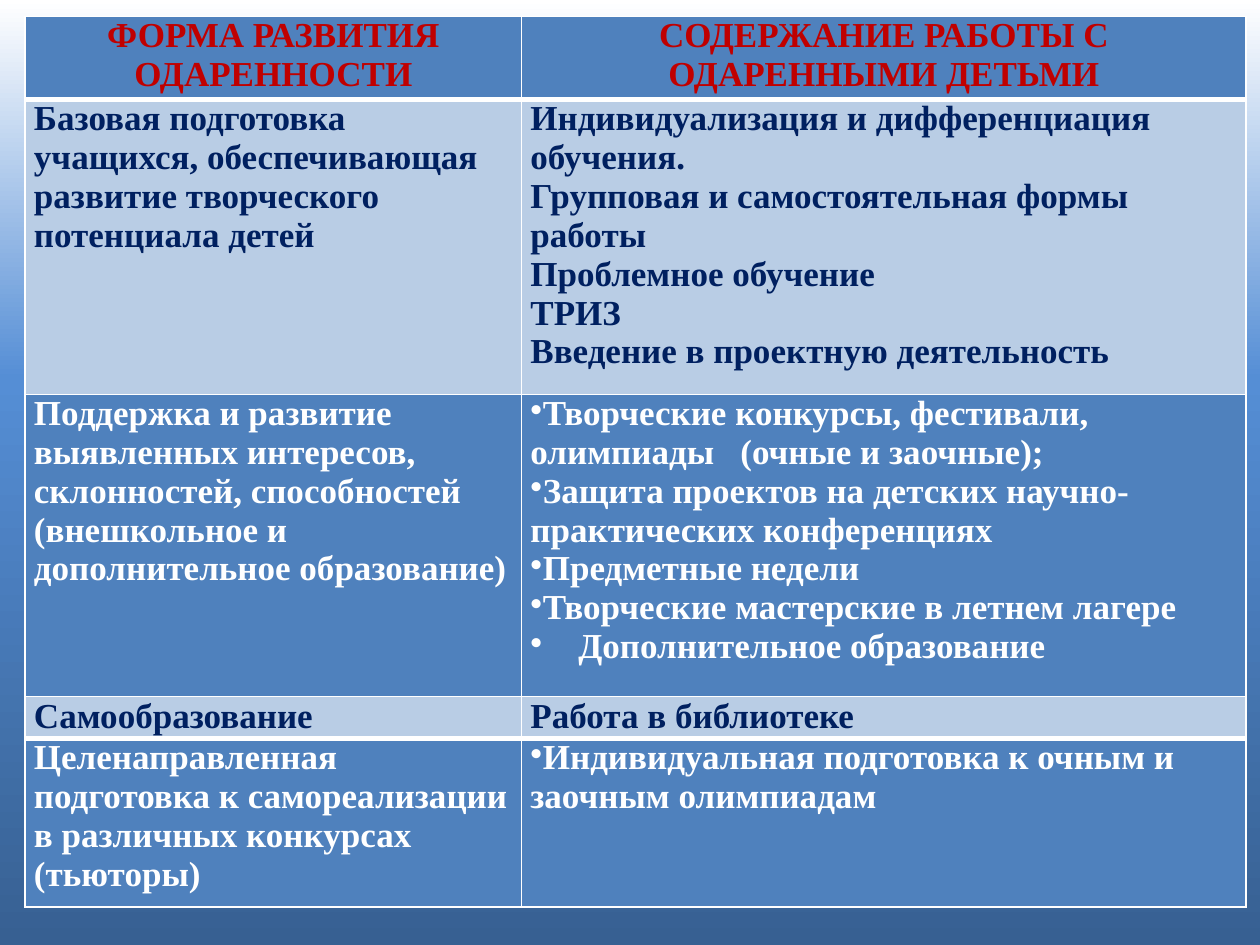
from lxml import etree
from copy import deepcopy
from pptx import Presentation
from pptx.dml.color import RGBColor
from pptx.enum.text import PP_ALIGN
from pptx.oxml.ns import qn
from pptx.util import Inches, Pt

CENTER = PP_ALIGN.CENTER
LEFT = PP_ALIGN.LEFT
RED, NAVY, WHITE = "C00000", "002060", "FFFFFF"
BLUE, PALE = "4F81BD", "B9CDE5"
THIN, THICK = 1, 3
HANGING = 0.38

COLUMN_WIDTHS = [3.94, 5.75]
ROW_HEIGHTS = [0.66, 2.34, 2.4, 0.33, 1.34]
ROW_STYLES = [
    {"fill": BLUE, "color": RED, "alignment": CENTER, "bottom": THICK},
    {"fill": PALE, "color": NAVY, "top": THICK},
    {"fill": BLUE, "color": WHITE, "bulleted": True},
    {"fill": PALE, "color": NAVY, "bottom": THICK},
    {"fill": BLUE, "color": WHITE, "bulleted": True, "top": THICK},
]
ROWS = [
    ("ФОРМА РАЗВИТИЯ ОДАРЕННОСТИ", ["СОДЕРЖАНИЕ РАБОТЫ С ОДАРЕННЫМИ ДЕТЬМИ"]),
    (
        "Базовая подготовка учащихся, обеспечивающая развитие творческого потенциала детей",
        [
            "Индивидуализация и дифференциация обучения.",
            "Групповая и самостоятельная формы работы",
            "Проблемное обучение",
            "ТРИЗ",
            "Введение в проектную деятельность",
        ],
    ),
    (
        "Поддержка и развитие выявленных интересов, склонностей, способностей "
        "(внешкольное и дополнительное образование)",
        [
            "Творческие конкурсы, фестивали, олимпиады   (очные и заочные);",
            "Защита проектов на детских научно-практических конференциях",
            "Предметные недели",
            "Творческие мастерские в летнем лагере",
            "Дополнительное образование",
        ],
    ),
    ("Самообразование", ["Работа в библиотеке"]),
    (
        "Целенаправленная подготовка к самореализации в различных конкурсах  (тьюторы)",
        ["Индивидуальная подготовка к очным и заочным олимпиадам"],
    ),
]
INDENTED = "Дополнительное образование"


def color(value):
    return RGBColor.from_string(value)


def apply(target, values):
    for name, value in values.items():
        setattr(target, name, value)


class SlideBuilder:
    font = {"name": "Times New Roman", "size": Pt(20), "bold": True}
    margins = {
        "margin_left": Inches(0.07),
        "margin_right": Inches(0.07),
        "margin_top": 0,
        "margin_bottom": 0,
    }

    def __init__(self, slide):
        self.slide = slide

    def background(self, stops):
        fill = self.slide.background.fill
        fill.gradient()
        fill.gradient_angle = 270
        stop_list = next(self.slide.element.iter(qn("a:gsLst")))
        for _ in range(len(stops) - len(stop_list)):
            stop_list.append(deepcopy(stop_list[0]))
        for stop, (position, value) in zip(fill.gradient_stops, stops):
            stop.position = position
            stop.color.rgb = color(value)

    def table(self, left, top, widths, heights):
        frame = self.slide.shapes.add_table(
            len(heights), len(widths), Inches(left), Inches(top),
            Inches(sum(widths)), Inches(sum(heights)),
        )
        table = frame.table
        for column, width in zip(table.columns, widths):
            column.width = Inches(width)
        for row, height in zip(table.rows, heights):
            row.height = Inches(height)
        return table

    def border(self, cell, side, width):
        properties = cell._tc.get_or_add_tcPr()
        line = etree.SubElement(properties, qn(f"a:ln{side}"), w=str(Pt(width)))
        fill = etree.SubElement(line, qn("a:solidFill"))
        etree.SubElement(fill, qn("a:srgbClr"), val=WHITE)

    def bullet(self, paragraph, left):
        properties = paragraph._p.get_or_add_pPr()
        properties.set("marL", str(Inches(left)))
        properties.set("indent", str(Inches(-HANGING)))
        etree.SubElement(properties, qn("a:buChar"), char="•")

    def cell(self, cell, lines, style, bulleted):
        apply(cell, self.margins)
        top, bottom = style.get("top", THIN), style.get("bottom", THIN)
        for side, width in zip("LRTB", (THIN, THIN, top, bottom)):
            self.border(cell, side, width)
        cell.fill.solid()
        cell.fill.fore_color.rgb = color(style["fill"])
        cell.text = "\n".join(lines)
        for paragraph in cell.text_frame.paragraphs:
            paragraph.alignment = style.get("alignment", LEFT)
            if bulleted:
                self.bullet(paragraph, HANGING if paragraph.text == INDENTED else 0)
            for run in paragraph.runs:
                apply(run.font, self.font)
                run.font.color.rgb = color(style["color"])


def main():
    presentation = Presentation()
    presentation.slide_width = Inches(10)
    presentation.slide_height = Inches(7.5)
    builder = SlideBuilder(presentation.slides.add_slide(presentation.slide_layouts[6]))
    builder.background([(0, WHITE), (0.4, "558ED5"), (1, "376092")])
    table = builder.table(0.2, 0.13, COLUMN_WIDTHS, ROW_HEIGHTS)
    for index, ((form, content), style) in enumerate(zip(ROWS, ROW_STYLES)):
        builder.cell(table.cell(index, 0), [form], style, False)
        builder.cell(table.cell(index, 1), content, style, style.get("bulleted", False))
    presentation.save("out.pptx")


if __name__ == "__main__":
    main()
